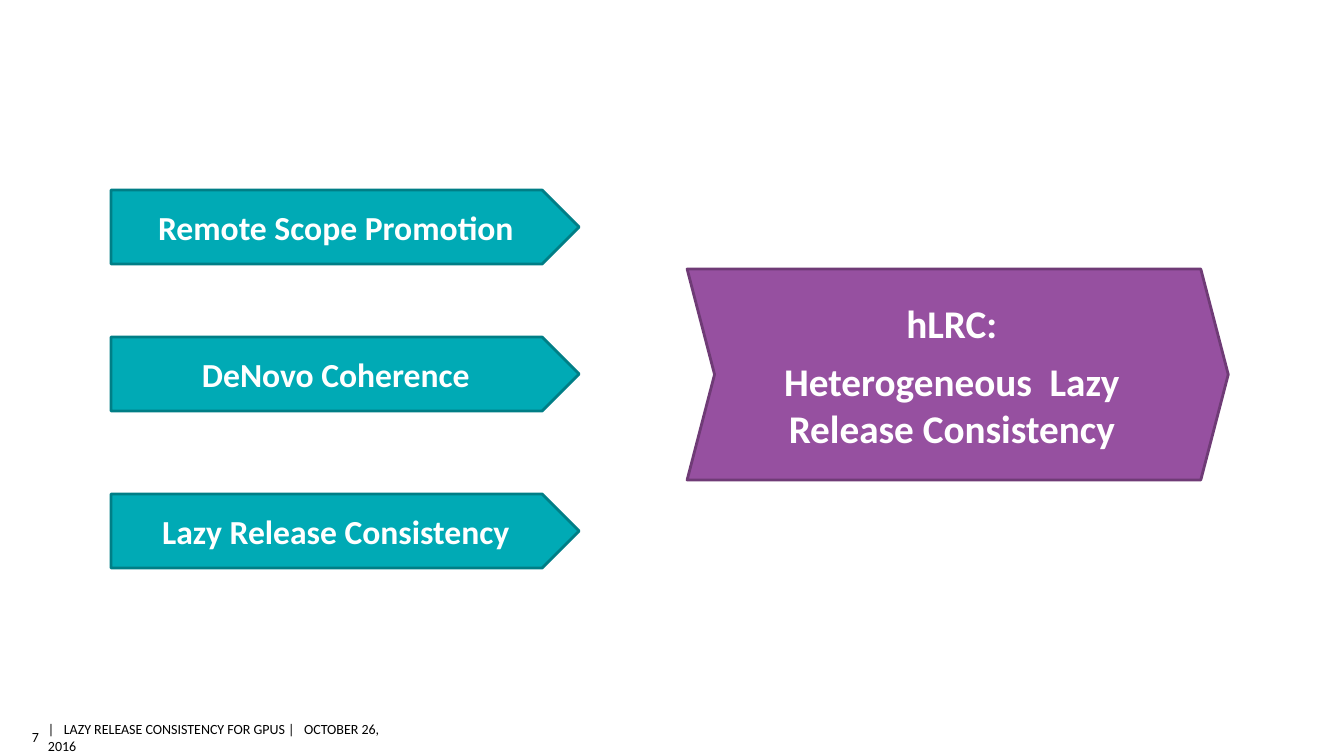
import pptx
import pptx.dml.color
import pptx.enum.shapes
import pptx.enum.text
import pptx.util

SHAPE = pptx.enum.shapes.MSO_SHAPE
ALIGN = pptx.enum.text.PP_ALIGN


def rgb(value):
    return pptx.dml.color.RGBColor.from_string(value)


class Deck:
    """Draws styled elements on the current slide, with lengths in px."""

    font = "Calibri"
    scale = 914400 / 100.8

    def __init__(self):
        self.prs = pptx.Presentation()
        self.prs.slide_width = pptx.util.Inches(13.33)
        self.prs.slide_height = pptx.util.Inches(7.5)
        self.s = self.prs.slides.add_slide(self.prs.slide_layouts[6])

    def emu(self, *lengths):
        return [pptx.util.Emu(round(n * self.scale)) for n in lengths]

    def set_text(self, tf, lines, size, color, bold=False, align=ALIGN.CENTER, gap=0):
        tf.word_wrap = True
        tf.vertical_anchor = pptx.enum.text.MSO_ANCHOR.MIDDLE
        for i, line in enumerate(lines):
            p = tf.add_paragraph() if i else tf.paragraphs[0]
            p.text = line
            p.alignment = align
            p.space_before = pptx.util.Pt(gap if i else 0)
            p.font.name = self.font
            p.font.size = pptx.util.Pt(size)
            p.font.bold = bold
            p.font.color.rgb = rgb(color)

    def shape(self, kind, box, fill, line):
        sp = self.s.shapes.add_shape(kind, *self.emu(*box))
        sp.shadow.inherit = False
        sp.fill.solid()
        sp.fill.fore_color.rgb = rgb(fill)
        sp.line.color.rgb = rgb(line)
        sp.line.width = pptx.util.Pt(2)
        return sp

    def text(self, box, lines, size, color, **style):
        tf = self.s.shapes.add_textbox(*self.emu(*box)).text_frame
        tf.margin_left = tf.margin_right = 0
        self.set_text(tf, lines, size, color, **style)


def main():
    deck = Deck()

    deck.text((48, 724, 349, 26),
              ["|   LAZY RELEASE CONSISTENCY FOR GPUS |   OCTOBER 26, 2016"],
              10, "000000", align=ALIGN.LEFT)
    deck.text((22, 724, 17, 26), ["7"], 10, "000000", align=ALIGN.RIGHT)

    techniques = [
        (190, "Remote Scope Promotion"),
        (337, "DeNovo Coherence"),
        (494, "Lazy Release Consistency"),
    ]
    for top, label in techniques:
        sp = deck.shape(SHAPE.PENTAGON, (111, top, 468, 74), "00AAB5", "007E86")
        deck.set_text(sp.text_frame, [label], 24, "FFFFFF", bold=True)

    result = deck.shape(SHAPE.CHEVRON, (687, 269, 541, 211), "9650A0", "6F3B76")
    result.adjustments[0] = 0.13
    deck.text((719, 294, 465, 163),
              ["hLRC:", "Heterogeneous  Lazy Release Consistency"],
              28, "FFFFFF", bold=True, gap=8)

    deck.prs.save("out.pptx")


if __name__ == "__main__":
    main()
